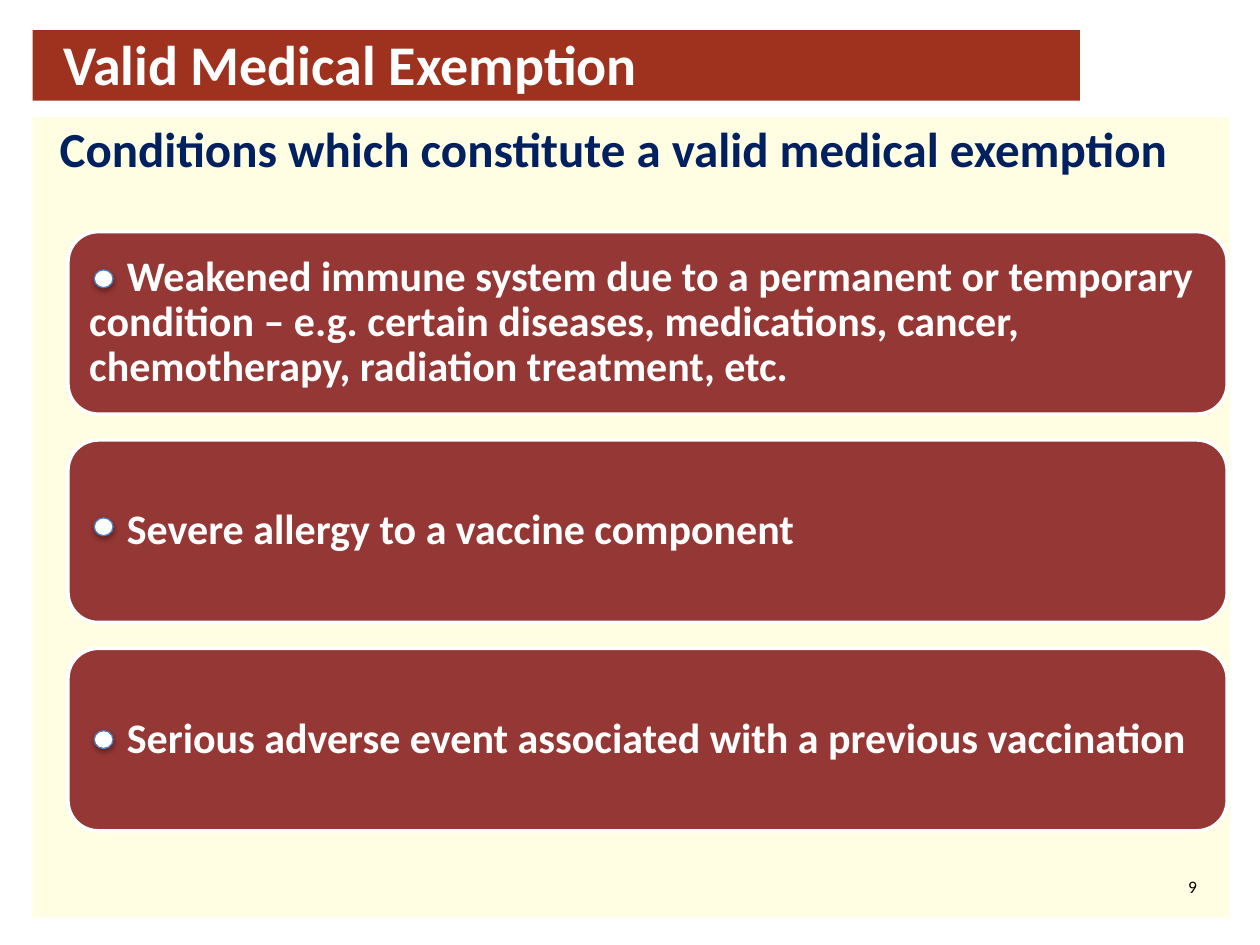
from dataclasses import dataclass

from lxml.etree import SubElement
from pptx import Presentation
from pptx.dml.color import RGBColor
from pptx.enum.shapes import MSO_SHAPE
from pptx.enum.text import MSO_ANCHOR, MSO_AUTO_SIZE, PP_ALIGN
from pptx.oxml.ns import qn
from pptx.util import Cm, Pt

COLORS = {
    "panel": "FFFDE2",
    "title_bar": "9F321E",
    "card": "953735",
    "white": "FFFFFF",
    "navy": "002060",
    "black": "000000",
    "dot_line": "4B7EBC",
}
FONT = "Calibri"


@dataclass(frozen=True)
class Box:
    """Left, top, width and height in centimetres."""
    left: float
    top: float
    width: float
    height: float

    def lengths(self) -> tuple:
        return Cm(self.left), Cm(self.top), Cm(self.width), Cm(self.height)


@dataclass(frozen=True)
class Condition:
    text: str
    dot_top: float


CONDITIONS = [
    Condition("Weakened immune system due to a permanent or temporary condition – "
              "e.g. certain diseases, medications, cancer, chemotherapy, "
              "radiation treatment, etc.", 5.44),
    Condition("Severe allergy to a vaccine component", 10.44),
    Condition("Serious adverse event associated with a previous vaccination", 14.73),
]
FIRST_CARD = Box(1.37, 4.67, 23.37, 3.68)
CARD_PITCH = 4.2
CARD_INSET = 0.25
FIRST_LINE_INDENT = 0.76


def color(name: str) -> RGBColor:
    return RGBColor.from_string(COLORS[name])


def add_filled_shape(slide, kind, box: Box, fill: str, line: str = "", line_width: float = 0):
    shape = slide.shapes.add_shape(kind, *box.lengths())
    shape.shadow.inherit = False
    shape.fill.solid()
    shape.fill.fore_color.rgb = color(fill)
    if line:
        shape.line.color.rgb = color(line)
        shape.line.width = Pt(line_width)
    else:
        shape.line.fill.background()
    return shape


def write_text(shape, text: str, *, size: float, font_color: str, bold: bool = True,
               align=PP_ALIGN.LEFT, anchor=MSO_ANCHOR.TOP, inset: float = 0,
               right_inset: float = 0, indent: float = 0, line_spacing: float = 1.0):
    frame = shape.text_frame
    frame.word_wrap = True
    frame.auto_size = MSO_AUTO_SIZE.NONE
    frame.vertical_anchor = anchor
    frame.margin_left = frame.margin_top = frame.margin_bottom = Cm(inset)
    frame.margin_right = Cm(right_inset or inset)
    paragraph = frame.paragraphs[0]
    paragraph.alignment = align
    paragraph.line_spacing = line_spacing
    if indent:
        paragraph_properties = paragraph.alignment is not None and paragraph._p.get_or_add_pPr()
        paragraph_properties.set("indent", str(Cm(indent)))
    run = paragraph.add_run()
    run.text = text
    run.font.name = FONT
    run.font.size = Pt(size)
    run.font.bold = bold
    run.font.color.rgb = color(font_color)


def add_soft_shadow(shape):
    effects = shape.element.spPr.find(qn("a:effectLst"))
    shadow = SubElement(effects, qn("a:outerShdw"), blurRad=str(Pt(3.1)),
                        dist=str(Pt(1.8)), dir="5400000", rotWithShape="0")
    shadow_color = SubElement(shadow, qn("a:srgbClr"), val=COLORS["black"])
    SubElement(shadow_color, qn("a:alpha"), val="35000")


def add_condition(slide, condition: Condition, index: int):
    box = Box(FIRST_CARD.left, FIRST_CARD.top + index * CARD_PITCH,
              FIRST_CARD.width, FIRST_CARD.height)
    card = add_filled_shape(slide, MSO_SHAPE.ROUNDED_RECTANGLE, box, "card", "white", 2)
    write_text(card, condition.text, size=24, font_color="white", anchor=MSO_ANCHOR.MIDDLE,
               inset=CARD_INSET, indent=FIRST_LINE_INDENT, line_spacing=0.9)
    dot = add_filled_shape(slide, MSO_SHAPE.OVAL, Box(1.9, condition.dot_top, 0.38, 0.36),
                           "white", "dot_line", 0.75)
    add_soft_shadow(dot)


def main():
    presentation = Presentation()
    presentation.slide_width, presentation.slide_height = Cm(25.4), Cm(19.05)
    slide = presentation.slides.add_slide(presentation.slide_layouts[5])

    title = slide.shapes.title
    title.left, title.top, title.width, title.height = Box(1.27, 0.64, 20.4, 1.27).lengths()
    write_text(title, "Valid Medical Exemption", size=32, font_color="white",
               anchor=MSO_ANCHOR.MIDDLE)
    for box, fill in ((Box(0.66, 2.36, 24.13, 16.13), "panel"),
                      (Box(0.66, 0.61, 21.11, 1.42), "title_bar")):
        backdrop = add_filled_shape(slide, MSO_SHAPE.RECTANGLE, box, fill)
        title.element.addprevious(backdrop.element)

    heading = slide.shapes.add_textbox(*Box(0.69, 2.39, 24.05, 16.1).lengths())
    write_text(heading, "Conditions which constitute a valid medical exemption", size=28,
               font_color="navy", align=PP_ALIGN.CENTER, right_inset=0.71)
    page_number = slide.shapes.add_textbox(*Box(23.16, 17.65, 0.97, 0.48).lengths())
    write_text(page_number, "9", size=10, font_color="black", bold=False, align=PP_ALIGN.RIGHT)

    for index, condition in enumerate(CONDITIONS):
        add_condition(slide, condition, index)

    presentation.save("out.pptx")


if __name__ == "__main__":
    main()
